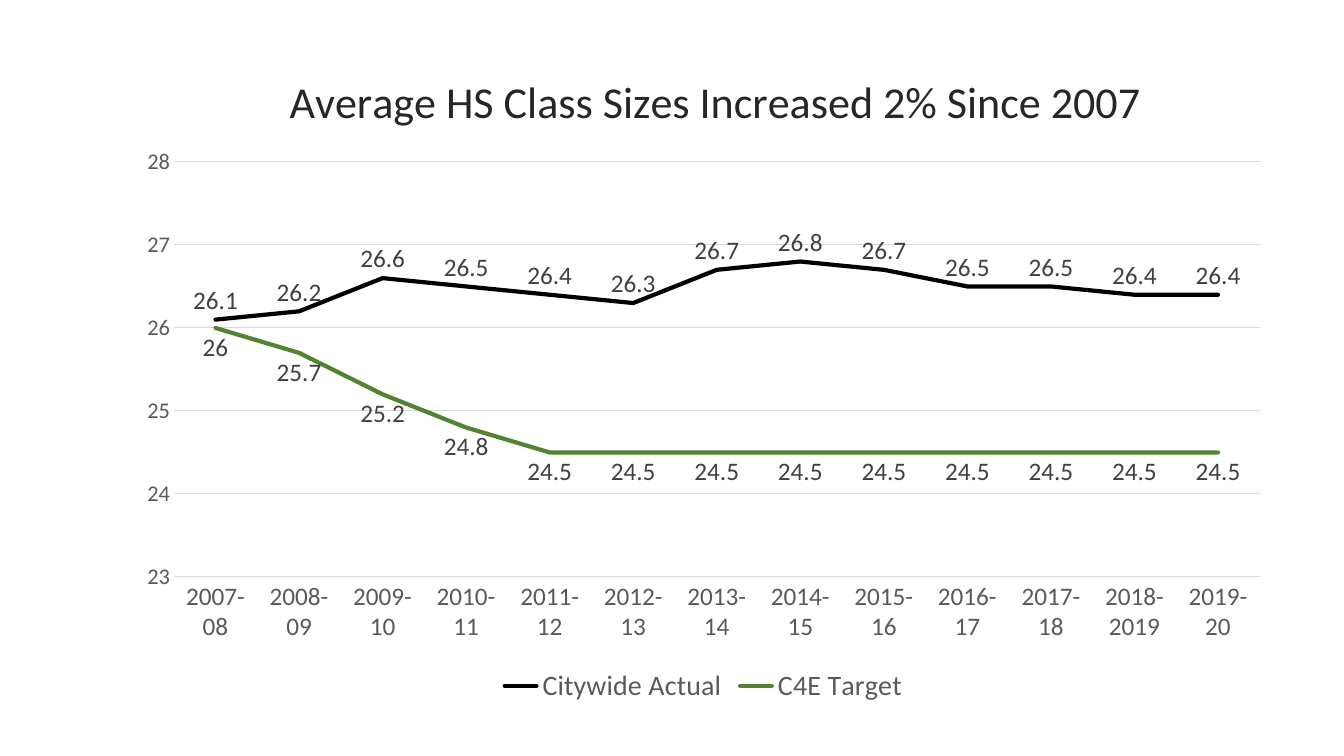
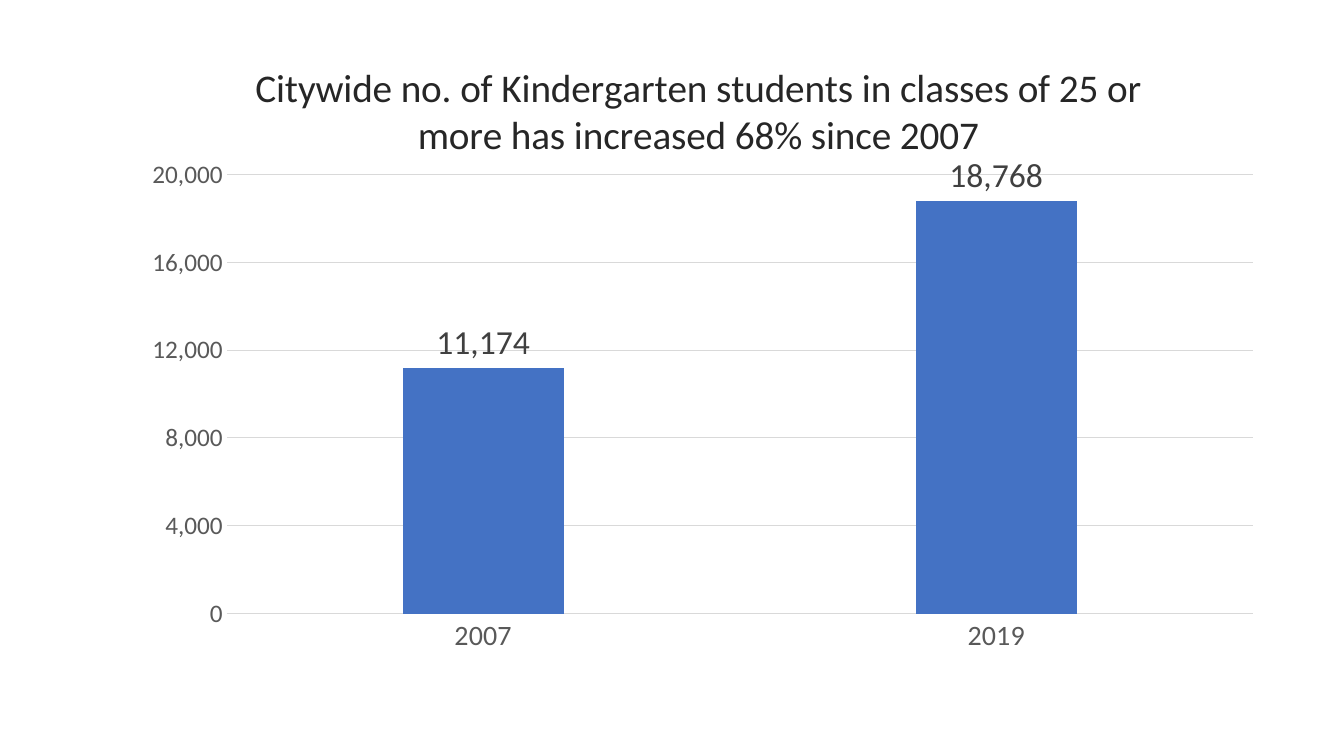
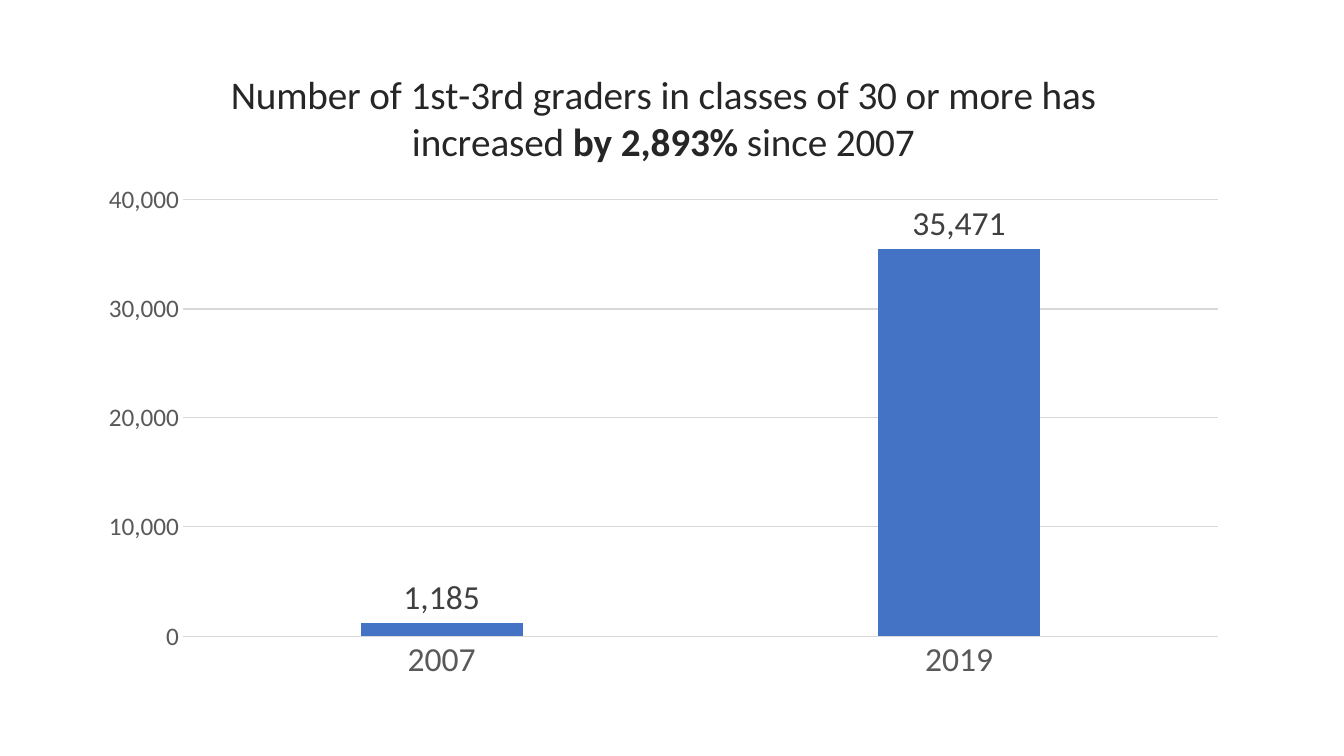
from pptx import Presentation
from pptx.chart.data import CategoryChartData
from pptx.dml.color import RGBColor
from pptx.enum.chart import XL_CHART_TYPE as ChartType
from pptx.enum.chart import XL_LABEL_POSITION as LabelPosition
from pptx.enum.chart import XL_LEGEND_POSITION as LegendPosition
from pptx.enum.chart import XL_MARKER_STYLE as MarkerStyle
from pptx.enum.chart import XL_TICK_MARK as TickMark
from pptx.oxml import parse_xml
from pptx.oxml.ns import nsdecls, qn
from pptx.util import Cm, Pt

FONT = "Calibri"
TITLE, LABEL, AXIS, GRID = "262626", "404040", "595959", "D9D9D9"
BLACK, GREEN, BLUE = "000000", "548235", "4472C4"

YEARS = [
    "2007-08", "2008-09", "2009-10", "2010-11", "2011-12", "2012-13", "2013-14",
    "2014-15", "2015-16", "2016-17", "2017-18", "2018-2019", "2019-20",
]
ACTUAL = [26.1, 26.2, 26.6, 26.5, 26.4, 26.3, 26.7, 26.8, 26.7, 26.5, 26.5, 26.4, 26.4]
TARGET = [26, 25.7, 25.2, 24.8] + [24.5] * 9

# Frames, plots and title corners are in centimetres on the slide.
# A title is a list of (text, bold); a scale is (minimum, maximum, step).
CHARTS = [
    dict(
        kind=ChartType.LINE,
        title=[("Average HS Class Sizes Increased 2% Since 2007", False)],
        title_size=31.5, title_corner=(7.1, 1.6),
        frame=(3.12, 1.35, 29.21, 16.51), plot=(4.38, 4.08, 27.37, 10.46),
        categories=YEARS, scale=(23, 28, 1), number_format="General",
        sizes=dict(category=18, value=16, label=18, legend=20),
        series=[
            ("Citywide Actual", ACTUAL, BLACK, LabelPosition.ABOVE),
            ("C4E Target", TARGET, GREEN, LabelPosition.BELOW),
        ],
    ),
    dict(
        kind=ChartType.COLUMN_CLUSTERED,
        title=[("Citywide no. of Kindergarten students in classes of 25 or more "
                "has increased 68% since 2007", False)],
        title_size=28,
        frame=(3.18, 0.91, 28.83, 15.93), plot=(5.71, 4.39, 25.86, 11.08),
        categories=["2007", "2019"], scale=(0, 20000, 4000), number_format="#,##0",
        sizes=dict(category=20, value=18, label=24),
        series=[("Series 1", [11174, 18768], BLUE, LabelPosition.OUTSIDE_END)],
    ),
    dict(
        kind=ChartType.COLUMN_CLUSTERED,
        title=[("Number of 1st-3rd graders in classes of 30 or more has increased ", False),
               ("by 2,893%", True), (" since 2007", False)],
        title_size=28,
        frame=(2.16, 1.24, 29.11, 16.26), plot=(4.61, 5.04, 26.08, 10.99),
        categories=["2007", "2019"], scale=(0, 40000, 10000), number_format="#,##0",
        sizes=dict(category=24, value=18, label=24),
        series=[("Series 1", [1185, 35471], BLUE, LabelPosition.OUTSIDE_END)],
    ),
]


def rgb(color):
    return RGBColor.from_string(color)


def style_font(font, size, color, bold=False):
    font.name, font.size, font.bold = FONT, Pt(size), bold
    font.color.rgb = rgb(color)


def add_text(para, text, **style):
    span = para.add_run()
    span.text = text
    style_font(span.font, **style)


def style_line(line, color, width):
    line.color.rgb = rgb(color)
    line.width = Pt(width)


def place(element, frame, position, inner=False):
    """Give a chart part a fixed place, as fractions of the chart's frame."""
    left, top, width, height = frame
    fractions = [(position[0] - left) / width, (position[1] - top) / height]
    fractions += [length / whole for length, whole in zip(position[2:], (width, height))]
    tags = '<c:layoutTarget val="inner"/>' if inner else ""
    tags += '<c:xMode val="edge"/><c:yMode val="edge"/>'
    tags += "".join(f'<c:{name} val="{part:.4f}"/>' for name, part in zip("xywh", fractions))
    layout = parse_xml(
        f'<c:layout {nsdecls("c")}><c:manualLayout>{tags}</c:manualLayout></c:layout>')
    present = element.find(qn("c:layout"))
    if present is None:
        element.insert(0, layout)
    else:
        element.replace(present, layout)


def style_title(chart, content):
    chart.has_title = True
    title = chart.chart_title
    para = title.text_frame.paragraphs[0]
    for text, bold in content["title"]:
        add_text(para, text, size=content["title_size"], color=TITLE, bold=bold)
    if "title_corner" in content:
        place(title._element, content["frame"], content["title_corner"])


def style_axes(chart, content):
    category, value = chart.category_axis, chart.value_axis
    for axis, name in ((category, "category"), (value, "value")):
        axis.major_tick_mark = axis.minor_tick_mark = TickMark.NONE
        style_font(axis.tick_labels.font, content["sizes"][name], AXIS)
    style_line(category.format.line, GRID, 0.75)
    value.format.line.fill.background()
    value.has_major_gridlines = True
    style_line(value.major_gridlines.format.line, GRID, 0.75)
    value.minimum_scale, value.maximum_scale, value.major_unit = content["scale"]
    value.tick_labels.number_format = content["number_format"]
    value.tick_labels.number_format_is_linked = False


def style_series(chart, content):
    is_line = content["kind"] == ChartType.LINE
    for series, (_, _, color, position) in zip(chart.plots[0].series, content["series"]):
        if is_line:
            series.smooth = False
            series.marker.style = MarkerStyle.NONE
            style_line(series.format.line, color, 3)
            series._element.xpath("c:spPr/a:ln")[0].set("cap", "rnd")
        else:
            series.format.fill.solid()
            series.format.fill.fore_color.rgb = rgb(color)
        labels = series.data_labels
        labels.show_value = True
        labels.position = position
        labels.number_format = content["number_format"]
        labels.number_format_is_linked = False
        style_font(labels.font, content["sizes"]["label"], LABEL)


def add_chart_slide(deck, content):
    page = deck.slides.add_slide(deck.slide_layouts[6])
    data = CategoryChartData()
    data.categories = content["categories"]
    for name, values, _, _ in content["series"]:
        data.add_series(name, values)
    frame = [Cm(length) for length in content["frame"]]
    chart = page.shapes.add_chart(content["kind"], *frame, data).chart
    style_font(chart.font, 10, BLACK)

    plot = chart.plots[0]
    plot.vary_by_categories = False
    if content["kind"] == ChartType.COLUMN_CLUSTERED:
        plot.gap_width, plot.overlap = 219, -27
    style_title(chart, content)
    style_axes(chart, content)
    style_series(chart, content)
    place(chart._chartSpace.chart.plotArea, content["frame"], content["plot"], inner=True)

    chart.has_legend = "legend" in content["sizes"]
    if chart.has_legend:
        chart.legend.position = LegendPosition.BOTTOM
        chart.legend.include_in_layout = False
        style_font(chart.legend.font, content["sizes"]["legend"], AXIS)


def main():
    deck = Presentation()
    deck.slide_width, deck.slide_height = Cm(33.87), Cm(19.05)
    for content in CHARTS:
        add_chart_slide(deck, content)
    deck.save("out.pptx")


if __name__ == "__main__":
    main()
